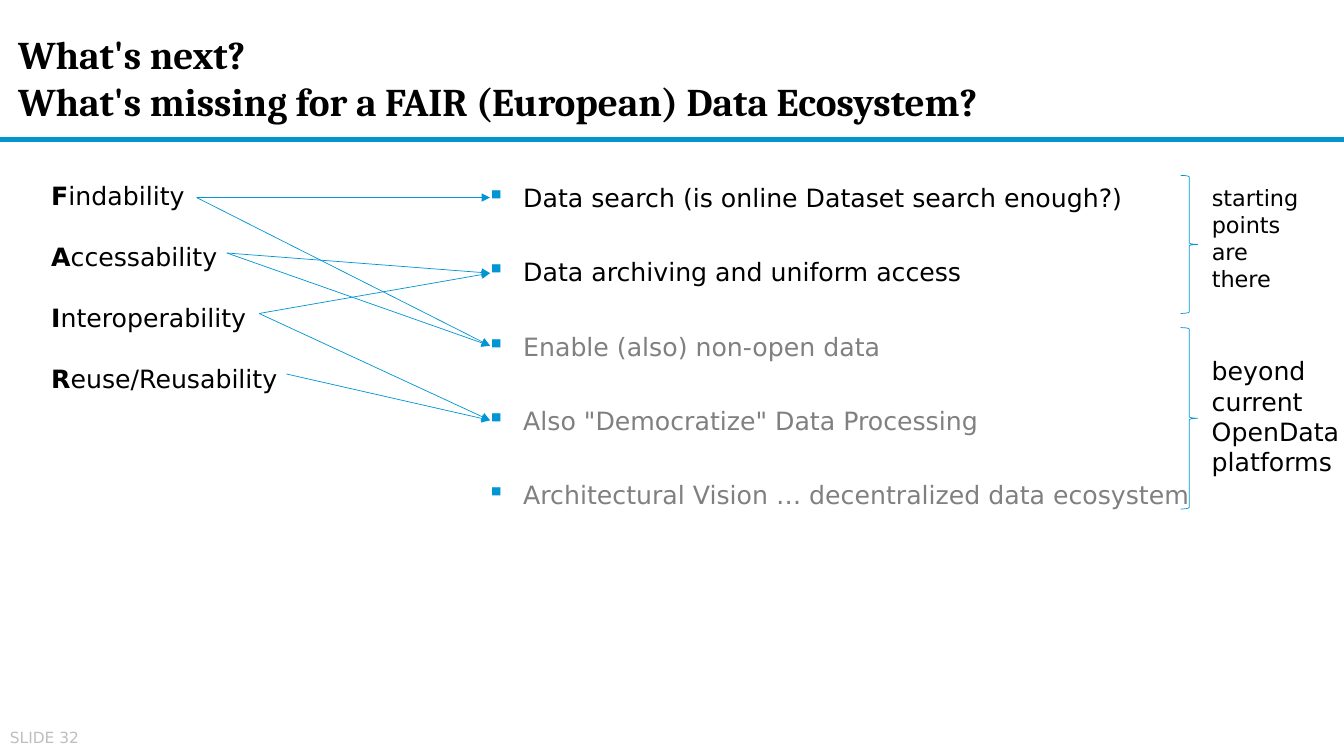
from lxml.etree import SubElement
from pptx import Presentation
from pptx.dml.color import RGBColor
from pptx.enum.shapes import MSO_CONNECTOR, MSO_SHAPE
from pptx.enum.text import MSO_ANCHOR
from pptx.oxml.ns import qn
from pptx.util import Inches, Pt

COLORS = {
    "text": "000000",
    "muted": "808080",
    "footer": "BFBFBF",
    "accent": "0096D3",
    "rule": "0C94B7",
}


def rgb(name):
    return RGBColor.from_string(COLORS[name])


def add_text(page, lines, at, size=18, font="DejaVu Sans", color="text", bold=False,
             margins=(0.1, 0.05), anchor=MSO_ANCHOR.TOP, after=0, indent=0,
             hanging=0, bullet=None, muted_from=None, bold_initial=False):
    box = page.shapes.add_textbox(*[Inches(length) for length in at])
    frame = box.text_frame
    frame.word_wrap = True
    frame.vertical_anchor = anchor
    frame.margin_left = frame.margin_right = Inches(margins[0])
    frame.margin_top = frame.margin_bottom = Inches(margins[1])
    for index, line in enumerate(lines):
        para = frame.paragraphs[0] if index == 0 else frame.add_paragraph()
        para.space_after = Pt(after)
        properties = para._p.get_or_add_pPr()
        properties.set("marL", str(Inches(indent)))
        properties.set("indent", str(-Inches(hanging)))
        if bullet:
            bullet_color = SubElement(properties, qn("a:buClr"))
            SubElement(bullet_color, qn("a:srgbClr"), val=COLORS["accent"])
            SubElement(properties, qn("a:buChar"), char=bullet)
        muted = muted_from is not None and index >= muted_from
        pieces = [(line[0], True), (line[1:], False)] if bold_initial else [(line, bold)]
        for text, heavy in pieces:
            span = para.add_run()
            span.text = text
            span.font.name = font
            span.font.size = Pt(size)
            span.font.bold = heavy
            span.font.color.rgb = rgb("muted" if muted else color)


deck = Presentation()
deck.slide_width = Inches(13.33)
deck.slide_height = Inches(7.5)
page = deck.slides.add_slide(deck.slide_layouts[6])

rule = page.shapes.add_shape(
    MSO_SHAPE.RECTANGLE, Inches(0), Inches(1.37), Inches(13.33), Inches(0.03))
rule.shadow.inherit = False
rule.fill.solid()
rule.fill.fore_color.rgb = rgb("rule")
rule.line.color.rgb = rgb("accent")
rule.line.width = Pt(1)

add_text(page, ["What's next?", "What's missing for a FAIR (European) Data Ecosystem?"],
         (0.18, 0.32, 11.38, 0.89), size=28, font="Cambria", bold=True,
         margins=(0, 0), anchor=MSO_ANCHOR.MIDDLE)

add_text(page, [
    "Data search (is online Dataset search enough?)",
    "Data archiving and uniform access",
    "Enable (also) non-open data",
    'Also "Democratize" Data Processing',
    "Architectural Vision … decentralized data ecosystem",
], (4.48, 1.76, 8.16, 5.12), margins=(0, 0.05), after=31.5,
    indent=0.71, hanging=0.36, bullet="▪", muted_from=2)

add_text(page, ["Findability", "Accessability", "Interoperability", "Reuse/Reusability"],
         (-0.3, 1.74, 6.67, 2.22), after=22, indent=0.71, bold_initial=True)

target_x = 4.86
search_y, archive_y, non_open_y, processing_y = 1.96, 2.71, 3.43, 4.17
principle_links = [
    (1.95, 1.96, [search_y, non_open_y]),
    (2.25, 2.51, [archive_y, non_open_y]),
    (2.57, 3.11, [archive_y, processing_y]),
    (2.84, 3.71, [processing_y]),
]
for start_x, start_y, targets in principle_links:
    for target_y in targets:
        arrow = page.shapes.add_connector(
            MSO_CONNECTOR.STRAIGHT, Inches(start_x), Inches(start_y),
            Inches(target_x), Inches(target_y))
        arrow.line.color.rgb = rgb("accent")
        arrow.line.width = Pt(0.5)
        properties = arrow.element.spPr
        SubElement(properties.find(qn("a:ln")), qn("a:tailEnd"), type="triangle")
        SubElement(properties, qn("a:effectLst"))

for top, height in [(1.74, 1.37), (3.25, 1.8)]:
    brace = page.shapes.add_shape(
        MSO_SHAPE.RIGHT_BRACE, Inches(11.71), Inches(top), Inches(0.17), Inches(height))
    brace.shadow.inherit = False
    brace.fill.background()
    brace.line.color.rgb = rgb("accent")
    brace.line.width = Pt(0.5)

add_text(page, ["starting points are there"], (11.92, 1.78, 1.11, 1.18), size=16)
add_text(page, ["beyond current OpenData", "platforms"], (11.92, 3.48, 1.53, 1.31))
add_text(page, ["SLIDE 32"], (0, 7.17, 1.44, 0.34), size=11, color="footer")

deck.save("out.pptx")
